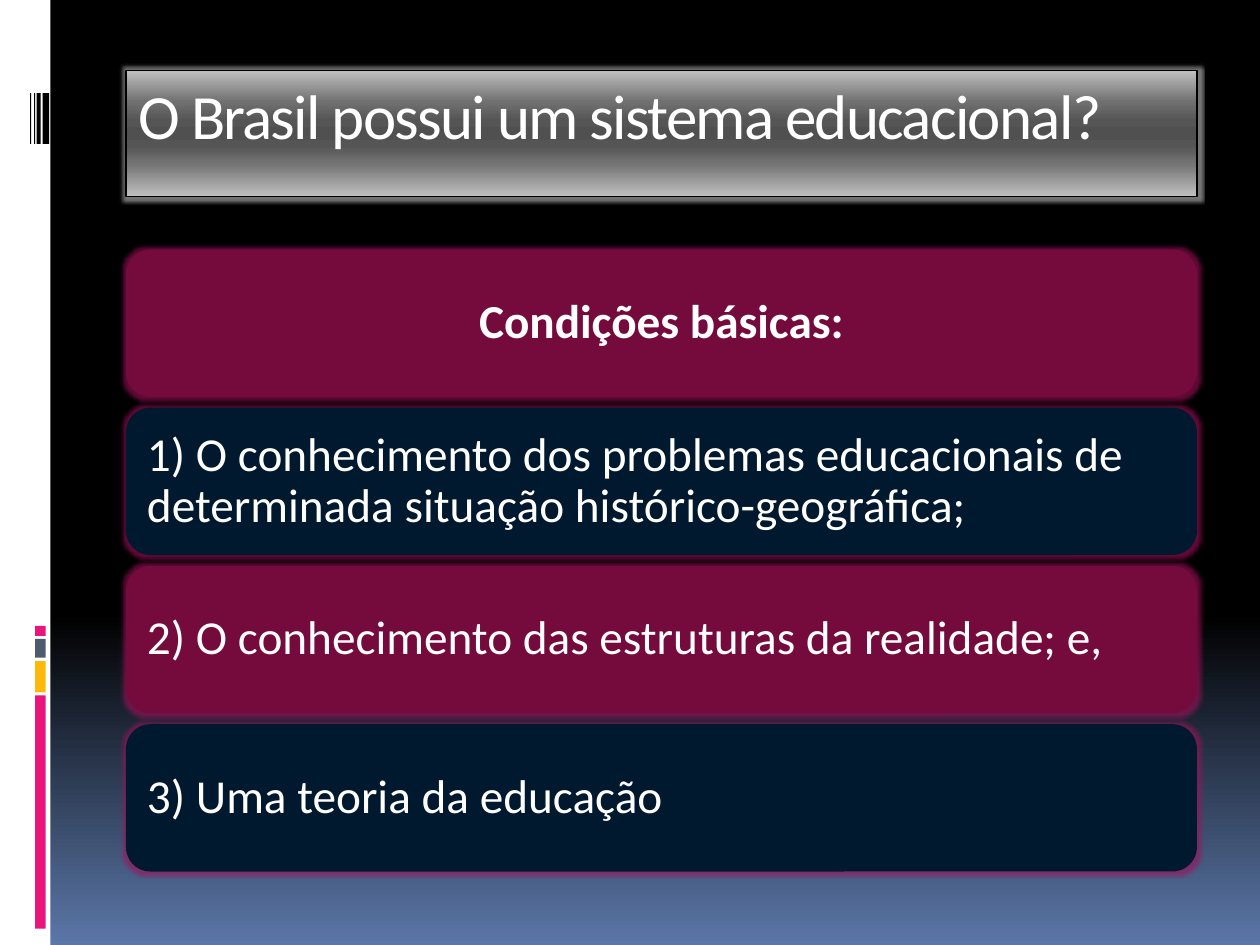
from dataclasses import dataclass

import pptx
import pptx.dml.color
import pptx.enum.shapes
import pptx.enum.text
import pptx.oxml
import pptx.oxml.ns
import pptx.util
from pptx.util import Cm, Pt

RGB = pptx.dml.color.RGBColor.from_string
SHAPE = pptx.enum.shapes.MSO_SHAPE
ANCHOR = pptx.enum.text.MSO_ANCHOR
ALIGN = pptx.enum.text.PP_ALIGN
NS = pptx.oxml.ns.nsdecls("a")


@dataclass(frozen=True)
class Theme:
    font: str = "Calibri"
    title_size: int = 36
    card_size: int = 27
    white: str = "FFFFFF"
    black: str = "000000"
    pink: str = "EA157A"
    amber: str = "FEB80A"
    slate: str = "4E5B6F"
    wine: str = "750B3D"
    navy: str = "00192F"
    card_glow: str = "A0105A"
    title_glow: str = "C0C0C0"
    sky: tuple = ((0, "000000"), (65, "000000"), (100, "5B77A8"))
    steel: tuple = ((0, "C0C0C0"), (25, "707070"), (40, "555555"), (50, "505050"),
                    (60, "555555"), (75, "767676"), (100, "C0C0C0"))


@dataclass(frozen=True)
class Bar:
    left: float
    top: float
    width: float
    height: float
    color: str


@dataclass(frozen=True)
class Card:
    text: str
    color: str
    heading: bool = False


THEME = Theme()
LEFT, WIDTH = 2.54, 21.59
CARD_TOP, CARD_HEIGHT, CARD_PITCH = 5.03, 2.97, 3.19

BARS = [
    Bar(0, 0, 1.02, 19.05, THEME.white),
    Bar(0.71, 14.02, 0.21, 4.7, THEME.pink),
    Bar(0.71, 13.33, 0.21, 0.63, THEME.amber),
    Bar(0.71, 12.88, 0.21, 0.38, THEME.slate),
    Bar(0.71, 12.62, 0.21, 0.2, THEME.pink),
] + [
    Bar(left, 1.88, width, 1.02, THEME.black)
    for left, width in ((0.86, 0.13), (0.74, 0.08), (0.69, 0.02), (0.61, 0.02))
]

CARDS = [
    Card("Condições básicas:", THEME.wine, heading=True),
    Card("1) O conhecimento dos problemas educacionais de determinada "
         "situação histórico-geográfica;", THEME.navy),
    Card("2) O conhecimento das estruturas da realidade; e,", THEME.wine),
    Card("3) Uma teoria da educação", THEME.navy),
]


def set_gradient(fill, element, stops) -> None:
    """Fill from top to bottom; element is the XML that holds the fill."""
    fill.gradient()
    fill.gradient_angle = 270
    gs_list = element.xpath(".//a:gsLst")[0]
    for gs in list(gs_list):
        gs_list.remove(gs)
    for percent, color in stops:
        gs_list.append(pptx.oxml.parse_xml(
            f'<a:gs {NS} pos="{percent * 1000}"><a:srgbClr val="{color}"/></a:gs>'))


def add_glow(sp, color: str, radius: float) -> None:
    sp.shadow.inherit = False
    sp._element.spPr.find(pptx.oxml.ns.qn("a:effectLst")).append(pptx.oxml.parse_xml(
        f'<a:glow {NS} rad="{Pt(radius)}"><a:srgbClr val="{color}">'
        '<a:alpha val="60000"/></a:srgbClr></a:glow>'))


def set_font(p, size: int, bold: bool = False) -> None:
    p.font.name = THEME.font
    p.font.size = Pt(size)
    p.font.bold = bold
    p.font.color.rgb = RGB(THEME.white)


def add_block(slide, kind, left: float, top: float, width: float, height: float, color: str):
    sp = slide.shapes.add_shape(kind, Cm(left), Cm(top), Cm(width), Cm(height))
    sp.shadow.inherit = False
    sp.fill.solid()
    sp.fill.fore_color.rgb = RGB(color)
    sp.line.fill.background()
    return sp


def add_card(slide, card: Card, top: float) -> None:
    sp = add_block(slide, SHAPE.ROUNDED_RECTANGLE, LEFT, top, WIDTH, CARD_HEIGHT, card.color)
    add_glow(sp, THEME.card_glow, 4)
    tf = sp.text_frame
    tf.word_wrap = True
    tf.vertical_anchor = ANCHOR.MIDDLE
    tf.margin_left = tf.margin_right = tf.margin_top = tf.margin_bottom = Cm(0.28)
    p = tf.paragraphs[0]
    p.text = card.text
    p.alignment = ALIGN.CENTER if card.heading else ALIGN.LEFT
    p.line_spacing = 0.9
    set_font(p, THEME.card_size, card.heading)


def format_title(title, text: str) -> None:
    title.left, title.top, title.width, title.height = Cm(LEFT), Cm(1.42), Cm(WIDTH), Cm(2.54)
    set_gradient(title.fill, title._element, THEME.steel)
    title.line.color.rgb = RGB(THEME.black)
    title.line.width = Pt(0.94)
    add_glow(title, THEME.title_glow, 4)
    tf = title.text_frame
    tf.word_wrap = True
    tf.auto_size = pptx.enum.text.MSO_AUTO_SIZE.NONE
    tf.vertical_anchor = ANCHOR.TOP
    p = tf.paragraphs[0]
    r = p.add_run()
    r.text = text
    r.font._element.set("spc", "-100")
    p.alignment = ALIGN.LEFT
    set_font(p, THEME.title_size)


def main() -> None:
    prs = pptx.Presentation()
    prs.slide_width, prs.slide_height = Cm(25.4), Cm(19.05)
    slide = prs.slides.add_slide(prs.slide_layouts[5])
    set_gradient(slide.background.fill, slide._element, THEME.sky)
    for bar in BARS:
        add_block(slide, SHAPE.RECTANGLE, bar.left, bar.top, bar.width, bar.height, bar.color)
    format_title(slide.shapes.title, "O Brasil possui um sistema educacional?")
    for i, card in enumerate(CARDS):
        add_card(slide, card, CARD_TOP + i * CARD_PITCH)
    prs.save("out.pptx")


if __name__ == "__main__":
    main()
